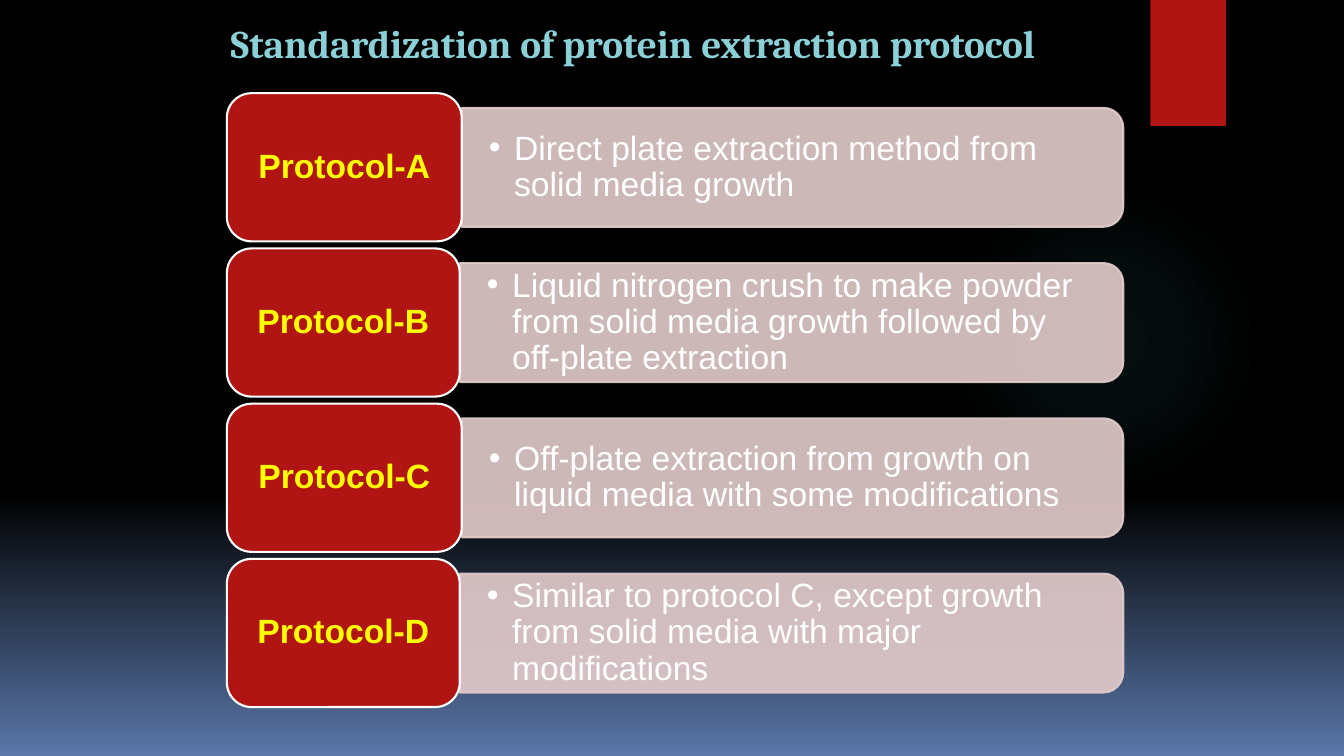
from lxml.etree import SubElement
from pptx import Presentation
from pptx.dml.color import RGBColor
from pptx.enum.shapes import MSO_SHAPE as Shape
from pptx.enum.text import MSO_ANCHOR as Anchor, PP_ALIGN as Align
from pptx.oxml import parse_xml
from pptx.oxml.ns import nsdecls, qn
from pptx.util import Inches, Pt

BLACK = RGBColor(0x00, 0x00, 0x00)
BLUE = RGBColor(0x5A, 0x77, 0xA9)
RED = RGBColor(0xB0, 0x15, 0x13)
PINK = RGBColor(0xE4, 0xCC, 0xCC)
WHITE = RGBColor(0xFF, 0xFF, 0xFF)
YELLOW = RGBColor(0xFF, 0xFF, 0x00)
AQUA = RGBColor(0x8A, 0xD0, 0xD6)
GLOW = RGBColor(0x50, 0xB9, 0xC1)

PROTOCOLS = [
    ("Protocol-A", 2.33, "Direct plate extraction method from solid media growth"),
    ("Protocol-B", 2.31, "Liquid nitrogen crush to make powder from solid media growth "
                         "followed by off-plate extraction"),
    ("Protocol-C", 2.33, "Off-plate extraction from growth on liquid media with some modifications"),
    ("Protocol-D", 2.31, "Similar to protocol C, except growth from solid media with major modifications"),
]
LEFT, RIGHT = 2.25, 11.14
FIRST_MIDDLE, ROW_STEP = 1.66, 1.54
BADGE_HEIGHT, PANEL_HEIGHT, NOTE_HEIGHT = 1.47, 1.18, 1.06


def add_block(kind, left, top, width, height, fill, line=None):
    block = page.shapes.add_shape(kind, Inches(left), Inches(top), Inches(width), Inches(height))
    block.shadow.inherit = False
    block.fill.solid()
    block.fill.fore_color.rgb = fill
    if line is None:
        block.line.fill.background()
    else:
        block.line.color.rgb = line
        block.line.width = Pt(1.5)
    return block


def write(box, text, color, **formats):
    frame = box.text_frame
    frame.word_wrap = True
    para = frame.paragraphs[0]
    span = para.add_run()
    span.text = text
    span.font.color.rgb = color
    for name, value in formats.items():
        setattr(span.font, name, value)
    return frame, para


deck = Presentation()
deck.slide_width, deck.slide_height = Inches(13.33), Inches(7.5)
page = deck.slides.add_slide(deck.slide_layouts[6])

# Background fading from black to blue
backdrop = page.background.fill
backdrop.gradient()
backdrop.gradient_angle = 270
for stop, position, color in zip(backdrop.gradient_stops, (0.65, 1), (BLACK, BLUE)):
    stop.position = position
    stop.color.rgb = color

# Faint glow and corner tab
glow = add_block(Shape.OVAL, 9.41, 1.83, 3.08, 3.08, GLOW)
stops = "".join(
    f'<a:gs pos="{place}000"><a:srgbClr val="{GLOW}"><a:alpha val="{alpha}000"/></a:srgbClr></a:gs>'
    for place, alpha in ((0, 7), (36, 6), (69, 0)))
solid = glow.fill._xPr.find(qn("a:solidFill"))
solid.getparent().replace(solid, parse_xml(
    f'<a:gradFill {nsdecls("a")}><a:gsLst>{stops}</a:gsLst><a:path path="circle">'
    '<a:fillToRect l="50000" t="50000" r="50000" b="50000"/></a:path></a:gradFill>'))
add_block(Shape.RECTANGLE, 11.41, 0, 0.75, 1.25, RED)

# One row per protocol: panel, description, badge
for row, (label, badge_width, description) in enumerate(PROTOCOLS):
    middle = FIRST_MIDDLE + row * ROW_STEP
    note_left = LEFT + badge_width
    length = RIGHT - note_left

    panel = add_block(Shape.ROUND_2_SAME_RECTANGLE, (note_left + RIGHT - PANEL_HEIGHT) / 2,
                      middle - length / 2, PANEL_HEIGHT, length, PINK, PINK)
    panel.rotation = 90
    for tint in panel._element.spPr.iter(qn("a:srgbClr")):
        SubElement(tint, qn("a:alpha"), val="90000")

    note = page.shapes.add_textbox(Inches(note_left), Inches(middle - NOTE_HEIGHT / 2),
                                   Inches(length - 0.06), Inches(NOTE_HEIGHT))
    frame, para = write(note, description, WHITE, name="Arial", size=Pt(24))
    frame.vertical_anchor = Anchor.MIDDLE
    frame.margin_left = frame.margin_right = Inches(0.27)
    frame.margin_top = frame.margin_bottom = Inches(0.14)
    para.line_spacing = 0.9
    props = para._p.get_or_add_pPr()
    props.set("marL", str(Inches(0.25)))
    props.set("indent", str(-Inches(0.25)))
    SubElement(props, qn("a:buFont"), typeface="Arial")
    SubElement(props, qn("a:buChar"), char="•")

    badge = add_block(Shape.ROUNDED_RECTANGLE, LEFT, middle - BADGE_HEIGHT / 2,
                      badge_width, BADGE_HEIGHT, RED, WHITE)
    frame, para = write(badge, label, YELLOW, name="Arial", size=Pt(24), bold=True)
    frame.vertical_anchor = Anchor.MIDDLE
    para.alignment = Align.CENTER
    para.line_spacing = 0.9

# Title
title = page.shapes.add_textbox(Inches(2.19), Inches(0.14), Inches(10.51), Inches(0.88))
write(title, "Standardization of protein extraction protocol", AQUA,
      name="Cambria", size=Pt(28), bold=True)

deck.save("out.pptx")
